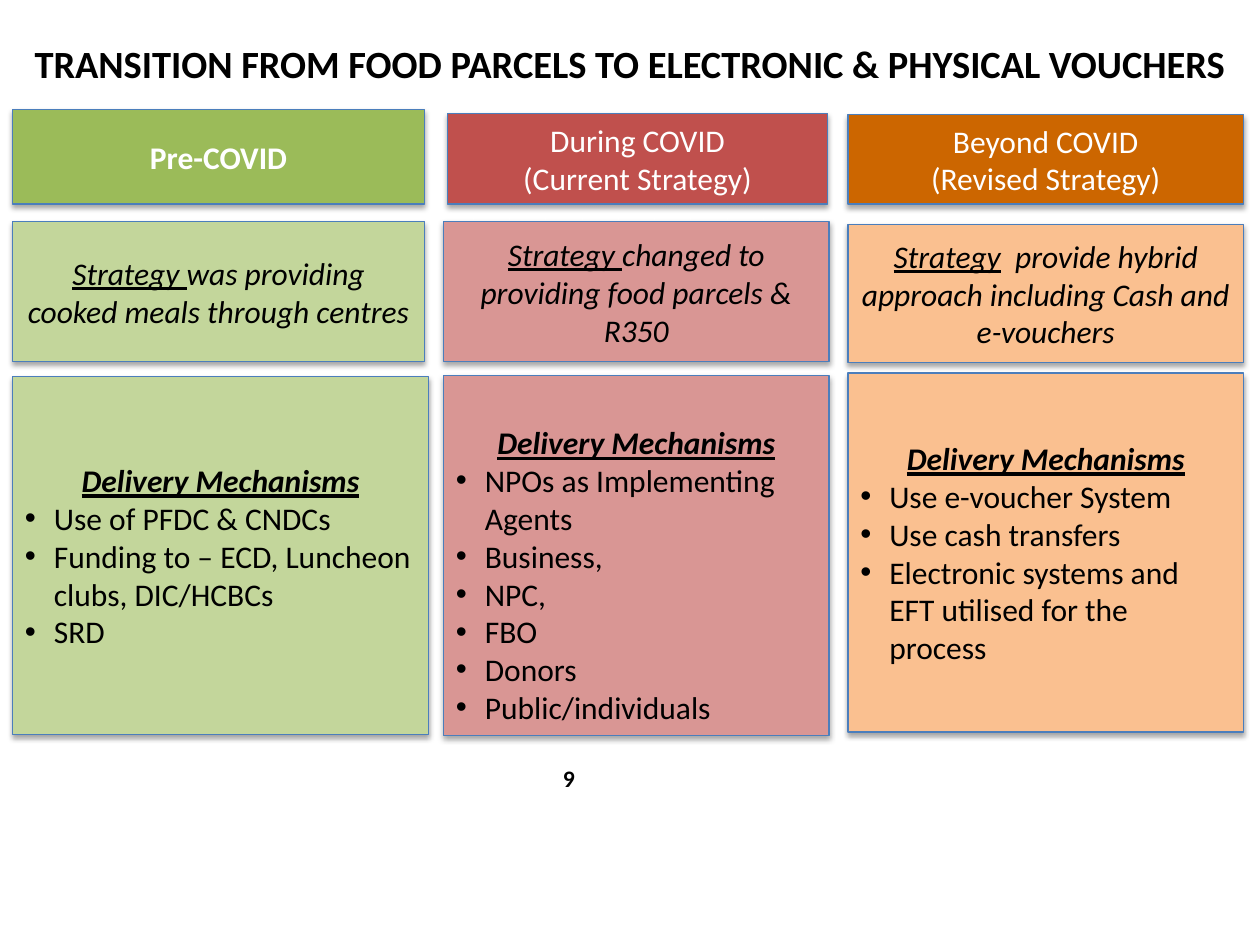
"""Build the slide on moving from food parcels to electronic and physical vouchers."""
import pptx
import pptx.dml.color
import pptx.enum.shapes
import pptx.enum.text
import pptx.oxml
import pptx.oxml.ns
import pptx.util

Inches = pptx.util.Inches
Pt = pptx.util.Pt
ALIGN = pptx.enum.text.PP_ALIGN
ANCHOR = pptx.enum.text.MSO_ANCHOR

COLOURS = {
    "black": "000000", "white": "FFFFFF", "outline": "4B7EBC",
    "green": "9BBB59", "light green": "C3D69B",
    "red": "C0504D", "light red": "D99694",
    "orange": "CC6600", "light orange": "FAC090",
}
BLANK_LINE = 0.3

PHASES = [
    {
        "header": (["Pre-COVID"], True, "green", (0.1, 0.87, 3.27, 0.75)),
        "strategy": ("Strategy ", "was providing cooked meals through centres",
                     (0.1, 1.76, 3.27, 1.11)),
        "delivery": (["Use of PFDC & CNDCs",
                      "Funding to – ECD, Luncheon clubs, DIC/HCBCs", "SRD"],
                     0, (0.1, 2.99, 3.3, 2.84)),
    },
    {
        "header": (["During COVID", "(Current Strategy)"], False, "red",
                   (3.55, 0.9, 3.02, 0.72)),
        "strategy": ("Strategy ", "changed to providing food parcels & R350",
                     (3.52, 1.76, 3.06, 1.11)),
        "delivery": (["NPOs as Implementing Agents", "Business,", "NPC,", "FBO",
                      "Donors", "Public/individuals"],
                     BLANK_LINE, (3.52, 2.98, 3.06, 2.86)),
    },
    {
        "header": (["Beyond COVID", "(Revised Strategy)"], False, "orange",
                   (6.73, 0.91, 3.14, 0.71)),
        "strategy": ("Strategy", "  provide hybrid approach including Cash and e-vouchers",
                     (6.73, 1.78, 3.14, 1.1)),
        "delivery": (["Use e-voucher System", "Use cash transfers",
                      "Electronic systems and EFT utilised for the process"],
                     0, (6.73, 2.96, 3.14, 2.85)),
    },
]


def colour(name):
    """Return the named colour."""
    return pptx.dml.color.RGBColor.from_string(COLOURS[name])


def xml(markup):
    """Parse one drawing element, with room for its namespace."""
    return pptx.oxml.parse_xml(markup.format(ns=pptx.oxml.ns.nsdecls("a")))


def add_span(paragraph, text, size=18, ink="black", bold=False, italic=False, underline=False):
    """Add one formatted run."""
    span = paragraph.add_run()
    span.text = text
    font = span.font
    font.name, font.size, font.color.rgb = "Calibri", Pt(size), colour(ink)
    font.bold, font.italic, font.underline = bold, italic, underline


def next_paragraph(frame, align=ALIGN.CENTER):
    """Return an unused first paragraph, or a new one."""
    first = frame.paragraphs[0]
    paragraph = frame.add_paragraph() if first.runs else first
    paragraph.alignment = align
    return paragraph


def add_bullet(frame, text):
    """Add a bulleted line."""
    paragraph = next_paragraph(frame, ALIGN.LEFT)
    properties = paragraph._p.get_or_add_pPr()
    properties.set("marL", str(Inches(0.23)))
    properties.set("indent", str(-Inches(0.23)))
    properties.append(xml('<a:buFont {ns} typeface="Arial"/>'))
    properties.append(xml('<a:buChar {ns} char="•"/>'))
    add_span(paragraph, text)


def add_label(page, place, text, size, anchor):
    """Add a bold line of text without a frame."""
    box = page.shapes.add_textbox(*map(Inches, place))
    frame = box.text_frame
    frame.word_wrap = True
    frame.vertical_anchor = anchor
    add_span(next_paragraph(frame), text, size, bold=True)


def add_panel(page, place, fill):
    """Add a filled rectangle with a soft shadow and return its text frame."""
    box = page.shapes.add_shape(
        pptx.enum.shapes.MSO_SHAPE.RECTANGLE, *map(Inches, place))
    box.fill.solid()
    box.fill.fore_color.rgb = colour(fill)
    box.line.color.rgb = colour("outline")
    box.line.width = Pt(0.75)
    box.shadow.inherit = False
    effects = box._element.spPr.find(pptx.oxml.ns.qn("a:effectLst"))
    effects.append(xml(
        f'<a:outerShdw {{ns}} blurRad="{Pt(3.1)}" dist="{Pt(1.8)}" dir="5400000" '
        'rotWithShape="0"><a:srgbClr val="000000"><a:alpha val="35000"/>'
        '</a:srgbClr></a:outerShdw>'))
    frame = box.text_frame
    frame.word_wrap = True
    frame.vertical_anchor = ANCHOR.MIDDLE
    return frame


def add_header(page, lines, bold, fill, place):
    """Add the name of a phase."""
    frame = add_panel(page, place, fill)
    for line in lines:
        add_span(next_paragraph(frame), line, ink="white", bold=bold)


def add_strategy(page, lead, rest, place, fill):
    """Add the strategy of a phase."""
    paragraph = next_paragraph(add_panel(page, place, fill))
    add_span(paragraph, lead, italic=True, underline=True)
    add_span(paragraph, rest, italic=True)


def add_delivery(page, mechanisms, drop, place, fill):
    """Add the delivery mechanisms of a phase."""
    frame = add_panel(page, place, fill)
    frame.margin_top = Inches(0.05 + drop)
    add_span(next_paragraph(frame), "Delivery Mechanisms",
             bold=True, italic=True, underline=True)
    for mechanism in mechanisms:
        add_bullet(frame, mechanism)


def main():
    """Build and save the deck."""
    deck = pptx.Presentation()
    deck.slide_width, deck.slide_height = Inches(10), Inches(7.5)
    page = deck.slides.add_slide(deck.slide_layouts[6])
    add_label(page, (0, 0.21, 10, 0.58),
              "TRANSITION FROM FOOD PARCELS TO ELECTRONIC & PHYSICAL VOUCHERS",
              22, ANCHOR.MIDDLE)
    for phase in PHASES:
        tint = "light " + phase["header"][2]
        add_header(page, *phase["header"])
        add_strategy(page, *phase["strategy"], tint)
        add_delivery(page, *phase["delivery"], tint)
    add_label(page, (3.57, 6.01, 1.89, 0.27), "9", 13.5, ANCHOR.TOP)
    deck.save("out.pptx")


if __name__ == "__main__":
    main()
